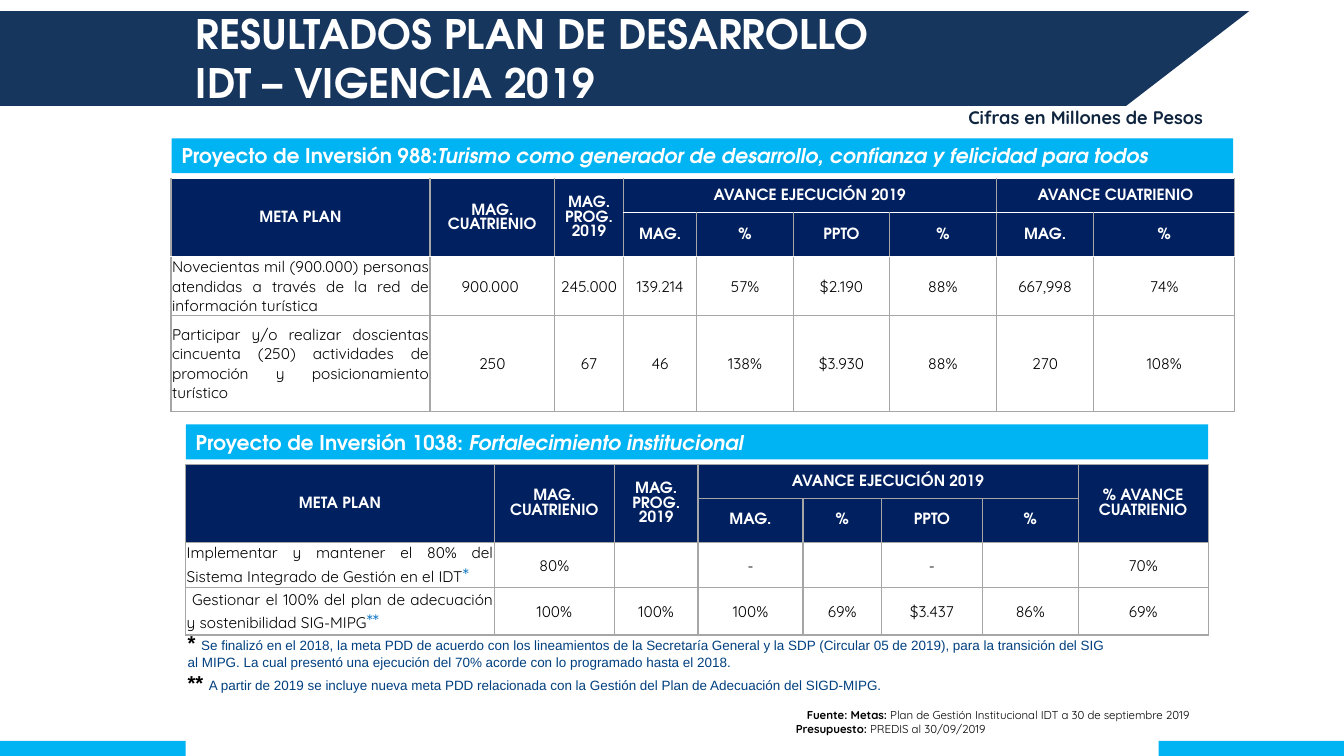
from dataclasses import dataclass

from lxml import etree
from pptx import Presentation
from pptx.dml import color as dml
from pptx.enum import shapes, text
from pptx.oxml import ns
from pptx.util import Pt

ALIGN = text.PP_ALIGN


@dataclass(frozen=True)
class Theme:
    navy: str = "17365D"
    header: str = "002060"
    cyan: str = "00B3F2"
    white: str = "FFFFFF"
    black: str = "000000"
    ink: str = "0F243E"
    mark: str = "0070C0"
    note: str = "004080"
    grid: str = "A6A6A6"
    heading: str = "TeX Gyre Adventor"
    body: str = "Quicksand"
    footnote: str = "Arial"
    title_size: float = 29
    band_size: float = 14.5
    units_size: float = 13
    cell_size: float = 11
    header_pitch: float = 10.2
    mark_size: float = 14
    star_size: float = 14.4
    note_size: float = 9.6
    source_size: float = 8.2


T = Theme()


@dataclass(frozen=True)
class Run:
    text: str
    size: float = T.cell_size
    color: str = T.black
    font: str = T.body
    bold: bool = False
    italic: bool = False


@dataclass(frozen=True)
class Para:
    runs: list[Run]
    align: ALIGN = ALIGN.LEFT
    indent: float = 0
    pitch: float = 0


@dataclass(frozen=True)
class Box:
    left: float
    top: float
    width: float
    height: float

    def lengths(self) -> list[Pt]:
        return [Pt(v) for v in (self.left, self.top, self.width, self.height)]


@dataclass(frozen=True)
class Project:
    band: Box
    code: str
    subject: str
    left: float
    top: float
    widths: list[float]
    heights: list[float]
    rule: str
    groups: list[tuple[str, int]]
    measures: list[str]
    goals: list[list[Run]]
    figures: list[list[str]]


def rgb(value: str) -> dml.RGBColor:
    return dml.RGBColor.from_string(value)


def write(frame, paras: list[Para]) -> None:
    frame.word_wrap = True
    for i, para in enumerate(paras):
        line = frame.paragraphs[0] if i == 0 else frame.add_paragraph()
        line.alignment = para.align
        if para.pitch:
            line.line_spacing = Pt(para.pitch)
        if para.indent:
            line._p.get_or_add_pPr().set("marL", str(Pt(para.indent)))
        for item in para.runs:
            run = line.add_run()
            run.text = item.text
            run.font.size = Pt(item.size)
            run.font.name = item.font
            run.font.bold = item.bold
            run.font.italic = item.italic
            run.font.color.rgb = rgb(item.color)


def paint(shape, color: str) -> None:
    shape.shadow.inherit = False
    shape.fill.solid()
    shape.fill.fore_color.rgb = rgb(color)
    shape.line.fill.background()


def add_bar(slide, box: Box, color: str):
    bar = slide.shapes.add_shape(shapes.MSO_SHAPE.RECTANGLE, *box.lengths())
    paint(bar, color)
    return bar


def add_text(slide, box: Box, paras: list[Para]) -> None:
    write(slide.shapes.add_textbox(*box.lengths()).text_frame, paras)


def style_cell(cell, fill: str | None, edges: dict[str, str | None]) -> None:
    cell.margin_left = cell.margin_right = cell.margin_top = Pt(0.7)
    cell.margin_bottom = 0
    cell.vertical_anchor = text.MSO_ANCHOR.MIDDLE
    props = cell._tc.get_or_add_tcPr()
    for side, color in edges.items():
        edge = etree.SubElement(props, ns.qn(f"a:ln{side}"), w=str(Pt(1)))
        if color:
            solid = etree.SubElement(edge, ns.qn("a:solidFill"))
            etree.SubElement(solid, ns.qn("a:srgbClr"), val=color)
        else:
            etree.SubElement(edge, ns.qn("a:noFill"))
    if fill:
        cell.fill.solid()
        cell.fill.fore_color.rgb = rgb(fill)
    else:
        cell.fill.background()


def new_table(slide, left: float, top: float, widths: list[float], heights: list[float]):
    box = Box(left, top, sum(widths), sum(heights))
    table = slide.shapes.add_table(len(heights), len(widths), *box.lengths()).table
    table.first_row = table.horz_banding = False
    for column, width in zip(table.columns, widths):
        column.width = Pt(width)
    for row, height in zip(table.rows, heights):
        row.height = Pt(height)
    return table


def add_project(slide, project: Project) -> None:
    band = add_bar(slide, project.band, T.cyan)
    band.text_frame.vertical_anchor = text.MSO_ANCHOR.MIDDLE
    write(band.text_frame, [Para([
        Run(project.code, T.band_size, T.white, T.heading, True),
        Run(project.subject, T.band_size, T.white, T.heading, True, True)])])

    table = new_table(slide, project.left, project.top, project.widths, project.heights)
    for r in range(len(project.heights)):
        above = project.rule if r <= 2 else T.grid
        below = project.rule if r < 2 else T.grid
        edges = {"L": T.grid, "R": T.grid, "T": above, "B": below}
        for c in range(len(project.widths)):
            style_cell(table.cell(r, c), T.header if r < 2 else None, edges)

    def label(row: int, column: int, words: str):
        cell = table.cell(row, column)
        run = Run(words, color=T.white, font=T.heading, bold=True)
        write(cell.text_frame, [Para([run], ALIGN.CENTER, pitch=T.header_pitch)])
        return cell

    column = 0
    measures = iter(project.measures)
    for words, span in project.groups:
        group = label(0, column, words)
        group.merge(table.cell(int(span == 1), column + span - 1))
        if span > 1:
            for c in range(column, column + span):
                label(1, c, next(measures))
        column += span

    for r, (goal, figures) in enumerate(zip(project.goals, project.figures), 2):
        write(table.cell(r, 0).text_frame, [Para(goal, ALIGN.JUSTIFY)])
        for c, figure in enumerate(figures, 1):
            if figure:
                write(table.cell(r, c).text_frame, [Para([Run(figure)], ALIGN.CENTER)])


COMMON_GROUPS = [("META PLAN", 1), ("MAG. CUATRIENIO", 1), ("MAG. PROG. 2019", 1),
                 ("AVANCE EJECUCIÓN 2019", 4)]
EXECUTION = ["MAG.", "%", "PPTO", "%"]
PROJECTS = [
    Project(
        Box(122.6, 98.8, 758.2, 25), "Proyecto de Inversión 988:",
        "Turismo como generador de desarrollo, confianza y felicidad para todos",
        122.2, 127.6, [185, 89, 49.2, 52.3, 69.2, 68.5, 76.4, 69.6, 100.7],
        [24.2, 30.4, 42.2, 68.6], T.white,
        COMMON_GROUPS + [("AVANCE CUATRIENIO", 2)], EXECUTION + ["MAG.", "%"],
        [[Run("Novecientas mil (900.000) personas atendidas a través de la red de "
              "información turística")],
         [Run("Participar y/o realizar doscientas cincuenta (250) actividades de "
              "promoción y posicionamiento turístico")]],
        [["900.000 ", "245.000", "139.214", "57%", "$2.190", "88%", "667,998", "74%"],
         ["250", "67", "46", "138%", "$3.930", "88%", "270", "108%"]]),
    Project(
        Box(132.7, 303.2, 730.3, 25), "Proyecto de Inversión 1038: ",
        "Fortalecimiento institucional",
        132.7, 331.8, [220.5, 85.7, 59.8, 74.9, 56.2, 72, 68.4, 92.9],
        [24.2, 31.2, 32.4, 34], T.grid,
        COMMON_GROUPS + [("% AVANCE CUATRIENIO", 1)], EXECUTION,
        [[Run("Implementar y mantener el 80% del Sistema Integrado de Gestión en el IDT"),
          Run("*", T.mark_size, T.mark)],
         [Run(" Gestionar el 100% del plan de adecuación y sostenibilidad SIG-MIPG"),
          Run("**", T.mark_size, T.mark)]],
        [["80%", "", "-", "", "-", "", "70%"],
         ["100%", "100%", "100%", "69%", "$3.437", "86%", "69%"]]),
]
NOTES = [
    ("*", "Se finalizó en el 2018, la meta PDD de acuerdo con los lineamientos de la "
          "Secretaría General y la SDP (Circular 05 de 2019), para la transición del SIG al "
          "MIPG. La cual presentó una ejecución del 70% acorde con lo programado hasta el 2018."),
    ("**", "A partir de 2019 se incluye nueva meta PDD relacionada con la Gestión del Plan "
           "de Adecuación del SIGD-MIPG."),
]


def main() -> None:
    deck = Presentation()
    deck.slide_width, deck.slide_height = Pt(960), Pt(540)
    slide = deck.slides.add_slide(deck.slide_layouts[6])

    add_bar(slide, Box(0, 529.2, 960, 10.8), T.cyan)
    outline = slide.shapes.build_freeform(0, Pt(7.9))
    outline.add_line_segments([(Pt(x), Pt(y)) for x, y in
                               ((892.4, 7.9), (804.5, 75.6), (0, 75.6))])
    paint(outline.convert_to_shape(), T.navy)
    add_bar(slide, Box(132.7, 518.4, 695, 21.6), T.white)

    add_text(slide, Box(132.7, 2.9, 620, 77.8), [
        Para([Run(words, T.title_size, T.white, T.heading, True)])
        for words in ("RESULTADOS PLAN DE DESARROLLO", "IDT – VIGENCIA 2019")])

    units = new_table(slide, 645.1, 68.4, [214.6], [31]).cell(0, 0)
    style_cell(units, None, dict.fromkeys("LRTB"))
    write(units.text_frame, [Para([
        Run("Cifras en Millones de Pesos", T.units_size, T.ink, bold=True)], ALIGN.RIGHT)])

    for project in PROJECTS:
        add_project(slide, project)

    add_text(slide, Box(127, 446.4, 671.8, 54), [
        Para([Run(stars + " ", T.star_size, T.black, T.footnote, True),
              Run(words, T.note_size, T.note, T.footnote)])
        for stars, words in NOTES])

    add_text(slide, Box(509.8, 502.3, 347, 26.6), [
        Para([Run("Fuente: Metas:", T.source_size, bold=True),
              Run(" Plan de Gestión Institucional IDT a 30 de septiembre 2019",
                  T.source_size)], ALIGN.RIGHT),
        Para([Run("Presupuesto: ", T.source_size, bold=True),
              Run("PREDIS al 30/09/2019", T.source_size)], indent=51.6)])

    deck.save("out.pptx")


if __name__ == "__main__":
    main()
